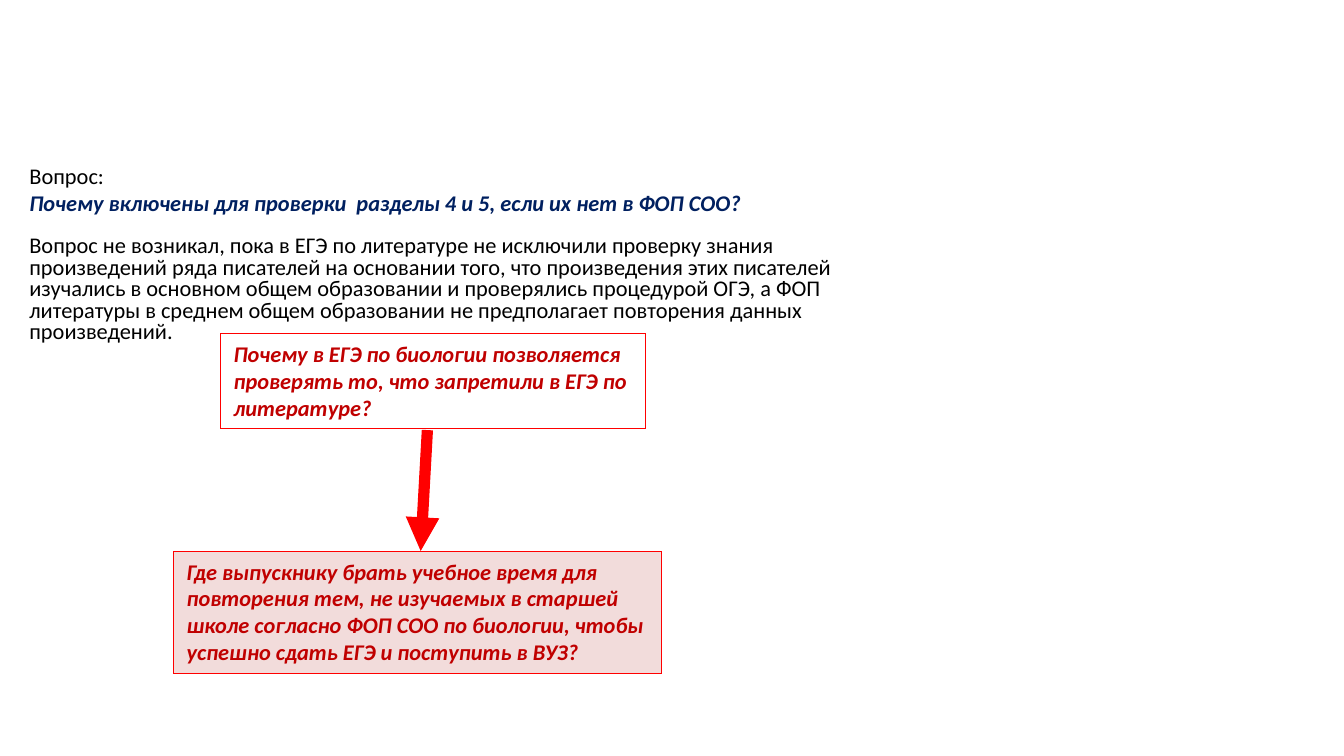
from lxml import etree
from pptx import Presentation
from pptx.dml.color import RGBColor
from pptx.enum.shapes import MSO_CONNECTOR
from pptx.oxml.ns import qn
from pptx.util import Inches, Pt

STRAIGHT = MSO_CONNECTOR.STRAIGHT

BLACK = RGBColor(0x00, 0x00, 0x00)
NAVY = RGBColor(0x00, 0x20, 0x60)
RED = RGBColor(0xFF, 0x00, 0x00)
DARK_RED = RGBColor(0xC0, 0x00, 0x00)
PINK = RGBColor(0xF2, 0xDC, 0xDB)

PLAIN = {"name": "Calibri", "size": Pt(12)}
EMPHASIS = {**PLAIN, "bold": True, "italic": True}

QUESTION = [
    ("Вопрос:", PLAIN, BLACK),
    ("Почему включены для проверки  разделы 4 и 5, если их нет в ФОП СОО?", EMPHASIS, NAVY),
]
BACKGROUND = (
    "Вопрос не возникал, пока в ЕГЭ по литературе не исключили проверку знания "
    "произведений ряда писателей на основании того, что произведения этих писателей "
    "изучались в основном общем образовании и проверялись процедурой ОГЭ, а ФОП "
    "литературы в среднем общем образовании не предполагает повторения данных "
    "произведений."
)
OBJECTION = (
    "Почему в ЕГЭ по биологии позволяется проверять то, что запретили в ЕГЭ по "
    "литературе?"
)
CONSEQUENCE = (
    "Где выпускнику брать учебное время для повторения тем, не изучаемых в старшей "
    "школе согласно ФОП СОО по биологии, чтобы успешно сдать ЕГЭ и поступить в ВУЗ?"
)


def add_text(slide, box, lines, line_spacing=None):
    """Add a text box of (text, font format, colour) paragraphs."""
    text_box = slide.shapes.add_textbox(*map(Inches, box))
    frame = text_box.text_frame
    frame.word_wrap = True
    for index, (text, font_format, color) in enumerate(lines):
        paragraph = frame.add_paragraph() if index else frame.paragraphs[0]
        paragraph.line_spacing = line_spacing
        run = paragraph.add_run()
        run.text = text
        for attribute, value in font_format.items():
            setattr(run.font, attribute, value)
        run.font.color.rgb = color
    return text_box


def add_framed_question(slide, box, text, fill=None):
    question = add_text(slide, box, [(text, EMPHASIS, DARK_RED)])
    question.line.color.rgb = RED
    if fill is not None:
        question.fill.solid()
        question.fill.fore_color.rgb = fill


def add_arrow(slide, start, end):
    arrow = slide.shapes.add_connector(STRAIGHT, *map(Inches, start + end))
    arrow.line.color.rgb = RED
    arrow.line.width = Pt(6)
    properties = arrow._element.spPr
    etree.SubElement(properties.find(qn("a:ln")), qn("a:tailEnd"), type="triangle")
    etree.SubElement(properties, qn("a:effectLst"))


def main():
    presentation = Presentation()
    presentation.slide_width = Inches(10)
    presentation.slide_height = presentation.slide_width * 9 // 16
    slide = presentation.slides.add_slide(presentation.slide_layouts[6])

    add_text(slide, (0.12, 1.16, 5.59, 0.5), QUESTION)
    add_text(slide, (0.12, 1.71, 6.46, 0.91), [(BACKGROUND, PLAIN, BLACK)], 0.8)
    add_framed_question(slide, (1.64, 2.48, 3.16, 0.71), OBJECTION)
    add_framed_question(slide, (1.29, 4.1, 3.63, 0.91), CONSEQUENCE, PINK)
    add_arrow(slide, (3.18, 3.2), (3.13, 4.1))

    presentation.save("out.pptx")


if __name__ == "__main__":
    main()
